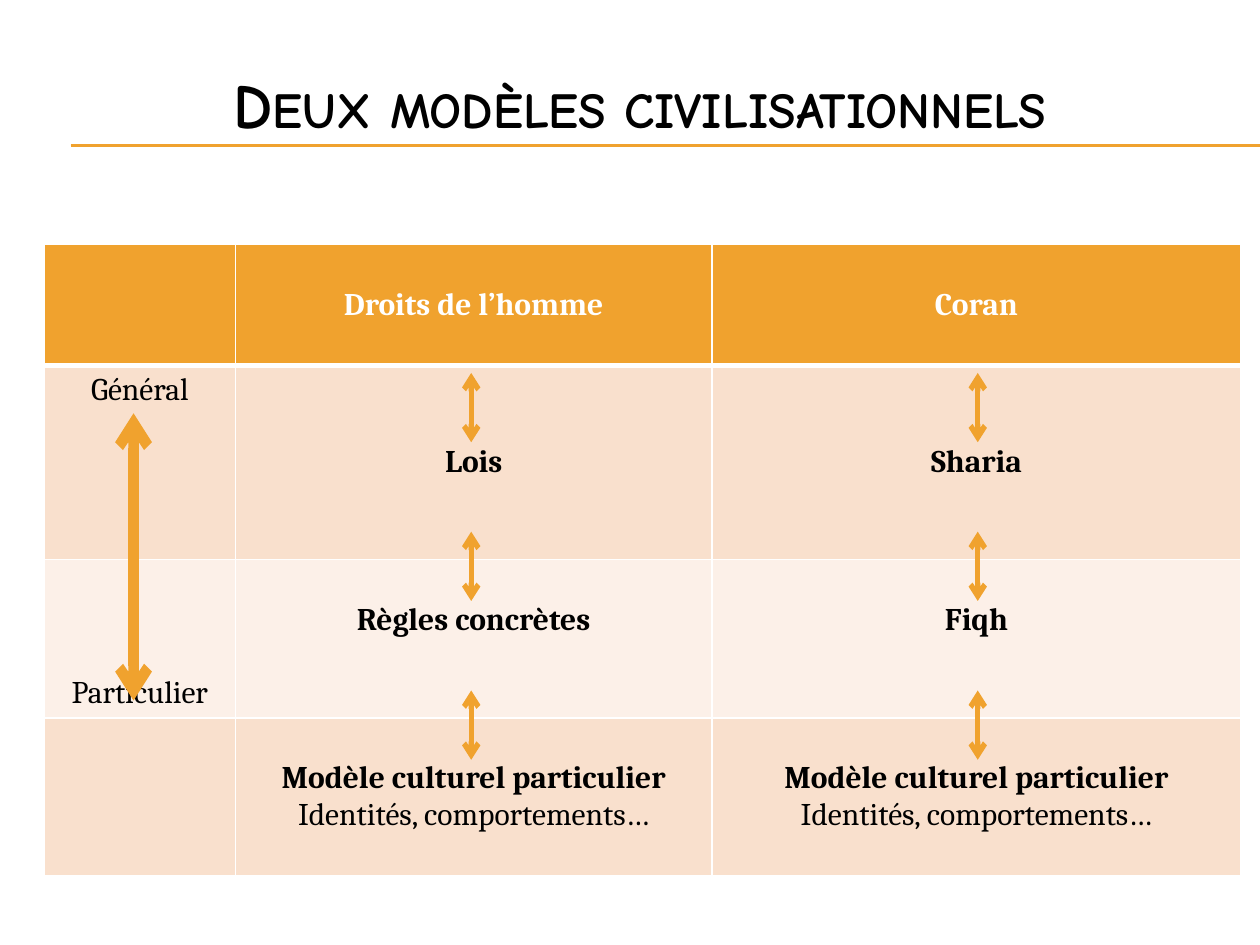
from dataclasses import dataclass, field

from lxml import etree
from pptx import Presentation
from pptx import util as u
from pptx.dml.color import RGBColor
from pptx.enum import shapes, text
from pptx.oxml.ns import qn

COLORS = {
    "accent": "F0A22E",
    "band_dark": "F9E0CD",
    "band_light": "FCF0E8",
    "white": "FFFFFF",
    "black": "000000",
}
TOP, MIDDLE, BOTTOM = (
    text.MSO_ANCHOR.TOP, text.MSO_ANCHOR.MIDDLE, text.MSO_ANCHOR.BOTTOM)
ONE_LINE_DOWN = 0.34

COLUMN_WIDTHS = [1.52, 3.78, 4.2]
ROW_HEIGHTS = [0.96, 1.54, 1.26, 1.25]
ROW_FILLS = ["accent", "band_dark", "band_light", "band_dark"]
MODEL = ["Modèle culturel particulier", "Identités, comportements…"]
ROWS = [
    [[], ["Droits de l’homme"], ["Coran"]],
    [["Général"], ["Lois"], ["Sharia"]],
    [["Particulier"], ["Règles concrètes"], ["Fiqh"]],
    [[], MODEL, MODEL],
]
SCALE_ANCHORS = [MIDDLE, TOP, BOTTOM, MIDDLE]
MODEL_ANCHORS = [MIDDLE, MIDDLE, TOP, MIDDLE]


def color(name):
    return RGBColor.from_string(COLORS[name])


def apply_font(font, values):
    for name, value in values.items():
        if name == "color":
            font.color.rgb = color(value)
        else:
            setattr(font, name, value)


@dataclass
class SlideBuilder:
    slide: object
    body_font: dict = field(default_factory=lambda: {
        "name": "Cambria", "size": u.Pt(18), "color": "black", "bold": False})
    title_font: dict = field(default_factory=lambda: {
        "name": "Comic Neue", "size": u.Pt(36), "color": "black", "bold": True})

    def title(self, words, left, top, width, height):
        shape = self.slide.shapes.title
        box = {"left": left, "top": top, "width": width, "height": height}
        for name, value in box.items():
            setattr(shape, name, u.Inches(value))
        frame = shape.text_frame
        frame.vertical_anchor = MIDDLE
        paragraph = frame.paragraphs[0]
        paragraph.alignment = text.PP_ALIGN.CENTER
        run = paragraph.add_run()
        run.text = words
        apply_font(run.font, self.title_font)
        run.font._element.set("cap", "small")

    def line(self, start, end, width, arrows=False):
        connector = self.slide.shapes.add_connector(
            shapes.MSO_CONNECTOR.STRAIGHT,
            *(u.Inches(value) for value in (*start, *end)))
        connector.line.color.rgb = color("accent")
        connector.line.width = u.Pt(width)
        if arrows:
            outline = connector.line._get_or_add_ln()
            for tag in ("a:headEnd", "a:tailEnd"):
                etree.SubElement(outline, qn(tag), type="arrow")
        etree.SubElement(connector._element.spPr, qn("a:effectLst"))

    def table(self, left, top):
        frame = self.slide.shapes.add_table(
            len(ROWS), len(COLUMN_WIDTHS), u.Inches(left), u.Inches(top),
            u.Inches(sum(COLUMN_WIDTHS)), u.Inches(sum(ROW_HEIGHTS)))
        table = frame.table
        for column, width in zip(table.columns, COLUMN_WIDTHS):
            column.width = u.Inches(width)
        for row, height in zip(table.rows, ROW_HEIGHTS):
            row.height = u.Inches(height)
        for row_index, row in enumerate(ROWS):
            for column_index, lines in enumerate(row):
                cell = table.cell(row_index, column_index)
                self.cell(cell, lines, row_index, column_index)

    def cell(self, cell, lines, row, column):
        is_scale = column == 0
        anchors = SCALE_ANCHORS if is_scale else MODEL_ANCHORS
        cell.vertical_anchor = anchors[row]
        if not is_scale and anchors[row] == TOP:
            cell.margin_top = u.Inches(ONE_LINE_DOWN)
        self.borders(cell, bottom=3 if row == 0 else 1)
        cell.fill.solid()
        cell.fill.fore_color.rgb = color(ROW_FILLS[row])
        for index, words in enumerate(lines):
            paragraphs = cell.text_frame.paragraphs
            paragraph = (cell.text_frame.add_paragraph() if index
                         else paragraphs[0])
            paragraph.alignment = text.PP_ALIGN.CENTER
            run = paragraph.add_run()
            run.text = words
            apply_font(run.font, {
                **self.body_font,
                "bold": not is_scale and index == 0,
                "color": "black" if row else "white"})

    def borders(self, cell, bottom):
        """Add white cell borders; must come before the cell fill."""
        properties = cell._tc.get_or_add_tcPr()
        widths = {"a:lnL": 1, "a:lnR": 1, "a:lnT": 1, "a:lnB": bottom}
        for tag, width in widths.items():
            border = etree.SubElement(properties, qn(tag), w=str(u.Pt(width)))
            fill = etree.SubElement(border, qn("a:solidFill"))
            etree.SubElement(fill, qn("a:srgbClr"), val=COLORS["white"])


def main():
    presentation = Presentation()
    presentation.slide_width = u.Inches(10)
    presentation.slide_height = u.Inches(7.5)
    layout = presentation.slide_layouts.get_by_name("Title Only")
    builder = SlideBuilder(presentation.slides.add_slide(layout))

    for y in (1.15, 1.16):
        builder.line((0.56, y), (10, y), 0.75)
    builder.title("Deux modèles civilisationnels", 0.33, 0.36, 9.5, 0.92)
    builder.table(0.35, 1.94)

    builder.line((1.06, 3.28), (1.06, 5.56), 6, arrows=True)
    for x in (3.74, 7.76):
        for step in range(3):
            y = 2.96 + 1.26 * step
            builder.line((x, y), (x, y + 0.55), 3, arrows=True)

    presentation.save("out.pptx")


if __name__ == "__main__":
    main()
